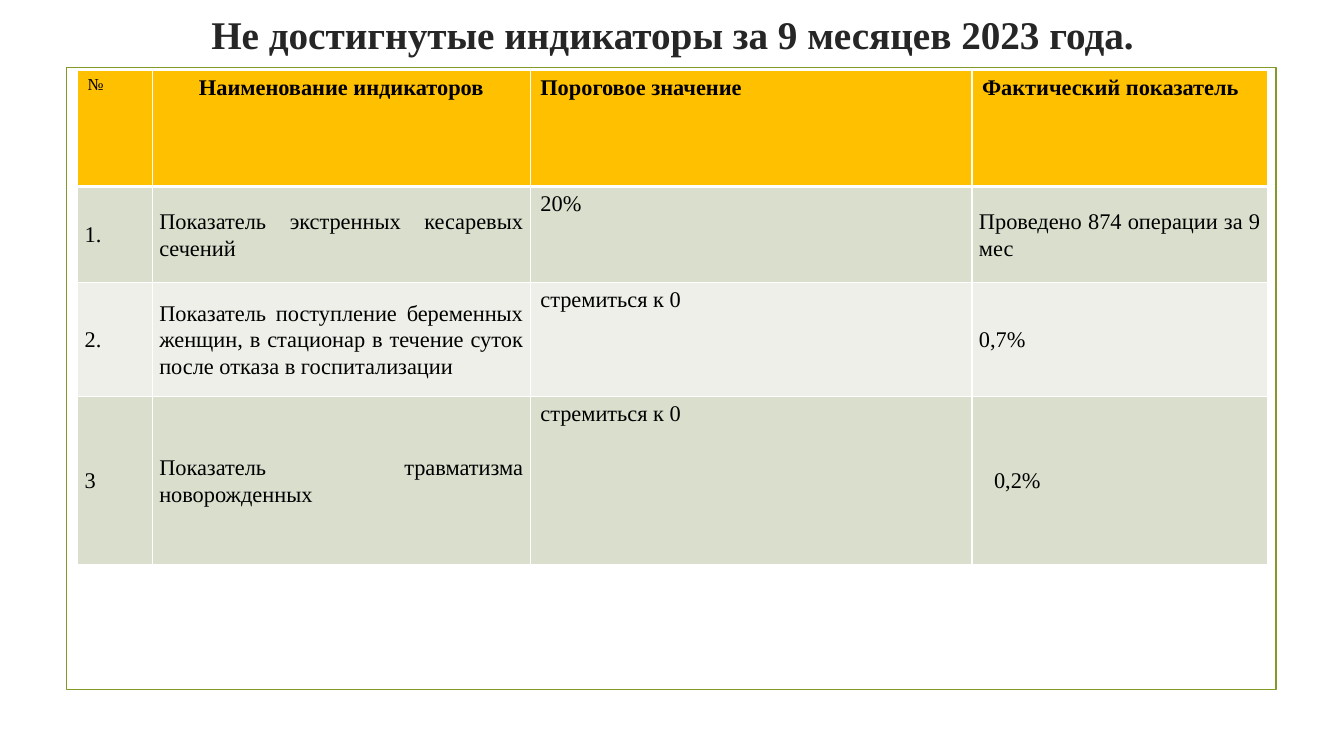
from dataclasses import dataclass

from lxml import etree
from pptx import Presentation
from pptx.dml.color import RGBColor
from pptx.enum.shapes import MSO_SHAPE
from pptx.enum.text import MSO_ANCHOR, PP_ALIGN
from pptx.oxml.ns import qn
from pptx.util import Inches, Pt

RECTANGLE = MSO_SHAPE.RECTANGLE
TOP, MIDDLE = MSO_ANCHOR.TOP, MSO_ANCHOR.MIDDLE
LEFT, CENTER, JUSTIFY = PP_ALIGN.LEFT, PP_ALIGN.CENTER, PP_ALIGN.JUSTIFY
TITLE_ONLY = 5


@dataclass(frozen=True)
class Theme:
    font: str = "Times New Roman"
    title: str = "262626"
    text: str = "000000"
    frame: str = "83992A"
    border: str = "FFFFFF"
    header: str = "FFC000"
    bands: tuple = ("D9DECD", "EDEFE8")
    title_size: int = 28
    body_size: int = 16
    number_size: int = 12


THEME = Theme()
TITLE = "Не достигнутые индикаторы за 9 месяцев 2023 года."
HEADERS = ["№", "Наименование индикаторов", "Пороговое значение", "Фактический показатель"]
INDICATORS = [
    ["1.", "Показатель экстренных кесаревых сечений", "20%", "Проведено 874 операции за 9 мес"],
    ["2.", "Показатель поступление беременных женщин, в стационар в течение суток "
     "после отказа в госпитализации", "стремиться к 0", "0,7%"],
    ["3", "Показатель травматизма новорожденных", "стремиться к 0", "0,2%"],
]
COLUMN_WIDTHS = [0.74, 3.75, 4.38, 2.93]
ROW_HEIGHTS = [1.15, 0.95, 1.13, 1.67]
THRESHOLD_COLUMN = 2
TIGHT_CELL = {
    "vertical_anchor": MIDDLE,
    "margin_left": Inches(0.07),
    "margin_right": Inches(0.07),
    "margin_top": 0,
    "margin_bottom": 0,
}
TIGHT_PARA = {"alignment": JUSTIFY, "line_spacing": 1.07, "space_after": Pt(8)}


def apply(target, values):
    for name, value in values.items():
        setattr(target, name, value)


def write(frame, text, size, color, bold=False, para_format=None):
    para = frame.paragraphs[0]
    apply(para, para_format or {"alignment": LEFT})
    span = para.add_run()
    span.text = text
    apply(span.font, {"name": THEME.font, "size": Pt(size), "bold": bold})
    span.font.color.rgb = RGBColor.from_string(color)
    return para


def add_title(page):
    box = page.shapes.title
    apply(box, {"left": Inches(0.92), "top": Inches(0.16),
                "width": Inches(11.5), "height": Inches(0.35)})
    apply(box.text_frame, {"vertical_anchor": MIDDLE, "word_wrap": True})
    write(box.text_frame, TITLE, THEME.title_size, THEME.title, True, {"alignment": CENTER})


def add_frame(page):
    box = page.shapes.add_shape(RECTANGLE, Inches(0.66), Inches(0.67), Inches(12), Inches(6.17))
    box.shadow.inherit = False
    box.fill.background()
    box.line.color.rgb = RGBColor.from_string(THEME.frame)
    box.line.width = Pt(1.25)


def set_borders(cell, widths):
    properties = cell._tc.get_or_add_tcPr()
    for side, width in zip("LRTB", widths):
        line = etree.SubElement(properties, qn(f"a:ln{side}"), w=str(Pt(width)))
        fill = etree.SubElement(line, qn("a:solidFill"))
        etree.SubElement(fill, qn("a:srgbClr"), val=THEME.border)


def paint(cell, color, borders):
    set_borders(cell, borders)
    cell.fill.solid()
    cell.fill.fore_color.rgb = RGBColor.from_string(color)


def fill_header(table):
    for column, text in enumerate(HEADERS):
        cell = table.cell(0, column)
        paint(cell, THEME.header, (1, 1, 1, 3))
        cell.vertical_anchor = TOP
        size = THEME.body_size if column else THEME.number_size
        alignment = CENTER if column == 1 else LEFT
        write(cell.text_frame, text, size, THEME.text, column > 0, {"alignment": alignment})


def fill_indicators(table):
    for row, values in enumerate(INDICATORS, 1):
        band = THEME.bands[(row - 1) % 2]
        for column, text in enumerate(values):
            cell = table.cell(row, column)
            paint(cell, band, (1, 1, 3 if row == 1 else 1, 1))
            tight = column != THRESHOLD_COLUMN
            apply(cell, TIGHT_CELL if tight else {"vertical_anchor": TOP})
            write(cell.text_frame, text, THEME.body_size, THEME.text,
                  para_format=TIGHT_PARA if tight else None)
    last_para = table.cell(len(INDICATORS), len(HEADERS) - 1).text_frame.paragraphs[0]
    last_para._p.get_or_add_pPr().set("marL", str(Inches(0.15)))


def add_indicator_table(page):
    table = page.shapes.add_table(
        len(ROW_HEIGHTS), len(COLUMN_WIDTHS), Inches(0.77), Inches(0.7),
        Inches(sum(COLUMN_WIDTHS)), Inches(sum(ROW_HEIGHTS))).table
    for column, width in zip(table.columns, COLUMN_WIDTHS):
        column.width = Inches(width)
    for row, height in zip(table.rows, ROW_HEIGHTS):
        row.height = Inches(height)
    fill_header(table)
    fill_indicators(table)


def main():
    deck = Presentation()
    apply(deck, {"slide_width": Inches(13.33), "slide_height": Inches(7.5)})
    page = deck.slides.add_slide(deck.slide_layouts[TITLE_ONLY])
    add_title(page)
    add_frame(page)
    add_indicator_table(page)
    deck.save("out.pptx")


if __name__ == "__main__":
    main()
